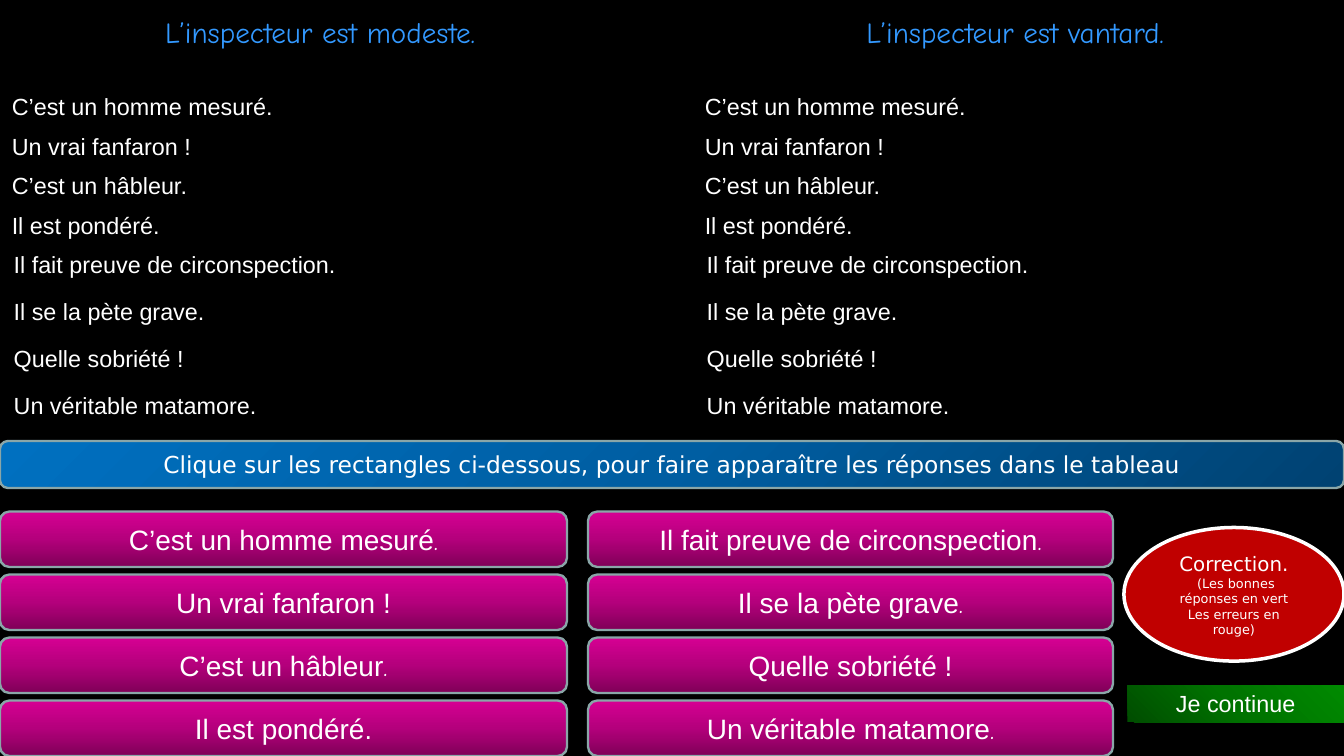
"""Build a French vocabulary exercise slide with two answer lists and clickable rectangles."""
from copy import deepcopy

from pptx import Presentation
from pptx.dml.color import RGBColor
from pptx.enum.shapes import MSO_SHAPE
from pptx.enum.text import MSO_ANCHOR, MSO_AUTO_SIZE, PP_ALIGN
from pptx.oxml.ns import qn
from pptx.util import Inches, Pt

ROUNDED, ELLIPSE, RECTANGLE = MSO_SHAPE.ROUNDED_RECTANGLE, MSO_SHAPE.OVAL, MSO_SHAPE.RECTANGLE
LEFT, CENTER = PP_ALIGN.LEFT, PP_ALIGN.CENTER
TOP, MIDDLE = MSO_ANCHOR.TOP, MSO_ANCHOR.MIDDLE
ARIAL, COMIC, DEJAVU = "Arial", "Comic Neue", "DejaVu Sans"
WHITE, BLACK, SKY, RED, BORDER = "FFFFFF", "000000", "3399FF", "C00000", "8AA6A8"
BLUES = ("004272", "005EA2", "0070C0")
PINKS = ("7F0057", "B4007C", "D60093")
GREENS = ("004D00", "007300", "008A00")

HEADINGS = [
    ("L’inspecteur est modeste.", (0, 0, 7.62, 0.75)),
    ("L’inspecteur est vantard.", (8.17, 0, 7.83, 0.75)),
]
ANSWERS = [
    ("C’est un homme mesuré", ".", COMIC),
    ("Un vrai fanfaron !", "", COMIC),
    ("C’est un hâbleur", ".", COMIC),
    ("Il est pondéré", ".", ARIAL),
    ("Il fait preuve de circonspection", ".", COMIC),
    ("Il se la pète grave", ".", COMIC),
    ("Quelle sobriété !", "", COMIC),
    ("Un véritable matamore", ".", COMIC),
]
INSTRUCTION = "Clique sur les rectangles ci-dessous, pour faire apparaître les réponses dans le tableau"
CORRECTION = [
    ("Correction.", 17),
    (" (Les bonnes réponses en vert", 11),
    ("Les erreurs en rouge)", 11),
]
ROWS = 4
LIST_LEFTS, LIST_WIDTH = (0, 8.25), 7.56
LIST_TOP, LIST_HEIGHT, LIST_GAP = 1.03, 1.89, 9.85
LINE_TOP, LINE_HEIGHT, LINE_PITCH = 2.91, 0.47, 0.56
BUTTON_COLUMNS = ((0, 6.75), (7, 6.25))
BUTTON_TOP, BUTTON_HEIGHT, BUTTON_PITCH = 6.09, 0.66, 0.75


def color(value):
    return RGBColor.from_string(value)


def place(box, area):
    box.left, box.top, box.width, box.height = (Inches(length) for length in area)


def write(box, paragraphs, align=CENTER, anchor=MIDDLE, insets=(0.14, 0.07)):
    """Fill a box with paragraphs, each a list of (text, size, font, colour) spans."""
    frame = box.text_frame
    frame.word_wrap = True
    frame.auto_size = MSO_AUTO_SIZE.NONE
    frame.vertical_anchor = anchor
    frame.margin_left = frame.margin_right = Inches(insets[0])
    frame.margin_top = frame.margin_bottom = Inches(insets[1])
    for index, spans in enumerate(paragraphs):
        para = frame.paragraphs[0] if index == 0 else frame.add_paragraph()
        para.alignment = align
        para.line_spacing = 1.0
        para.space_before = para.space_after = Pt(0)
        for text, size, font, tone in spans:
            span = para.add_run()
            span.text = text
            span.font.size = Pt(size)
            span.font.name = font
            span.font.color.rgb = color(tone)
    return frame


def paint_gradient(shape, tones, angle):
    shape.fill.gradient()
    shape.fill.gradient_angle = angle
    stops = shape._element.spPr.find(".//" + qn("a:gsLst"))
    stops.insert(1, deepcopy(stops[0]))
    for stop, tone, position in zip(shape.fill.gradient_stops, tones, (0, 0.5, 1)):
        stop.color.rgb = color(tone)
        stop.position = position


def add_panel(page, kind, area, border=None, width=2):
    shape = page.shapes.add_shape(kind, *(Inches(length) for length in area))
    shape.shadow.inherit = False
    shape.fill.background()
    if border:
        shape.line.color.rgb = color(border)
        shape.line.width = Pt(width)
    else:
        shape.line.fill.background()
    return shape


def add_headings(page):
    (_, left_area), (_, right_area) = HEADINGS
    title = page.shapes.title
    place(title, left_area)
    right_panel = add_panel(page, ROUNDED, right_area)
    title._element.spPr.append(deepcopy(right_panel._element.spPr.find(qn("a:prstGeom"))))
    for box, (text, _) in zip((title, right_panel), HEADINGS):
        write(box, [[(text, 25, COMIC, SKY)]])


def add_lists(page):
    lines = [[(text + dot, 20, ARIAL, WHITE)] for text, dot, _ in ANSWERS]
    for body, left in zip(list(page.placeholders)[1:], LIST_LEFTS):
        place(body, (left, LIST_TOP, LIST_WIDTH, LIST_HEIGHT))
        frame = write(body, lines[:ROWS], LEFT, TOP)
        for index, para in enumerate(frame.paragraphs):
            properties = para._p.get_or_add_pPr()
            properties.set("marL", "0")
            properties.set("indent", "0")
            para.space_before = Pt(LIST_GAP if index else 0)
            properties.append(properties.makeelement(qn("a:buNone"), {}))
        for row, line in enumerate(lines[ROWS:]):
            top = LINE_TOP + row * LINE_PITCH
            panel = add_panel(page, ROUNDED, (left, top, LIST_WIDTH, LINE_HEIGHT))
            write(panel, [line], LEFT)


def add_buttons(page):
    for index, (text, dot, dot_font) in enumerate(ANSWERS):
        column, row = divmod(index, ROWS)
        left, width = BUTTON_COLUMNS[column]
        top = BUTTON_TOP + row * BUTTON_PITCH
        button = add_panel(page, ROUNDED, (left, top, width, BUTTON_HEIGHT), BORDER)
        paint_gradient(button, PINKS, 90)
        spans = [(text, 24, ARIAL, WHITE)]
        if dot:
            spans.append((dot, 23, dot_font, WHITE))
        write(button, [spans])


def main():
    deck = Presentation()
    deck.slide_width, deck.slide_height = Inches(16), Inches(9)
    page = deck.slides.add_slide(deck.slide_layouts.get_by_name("Two Content"))
    page.background.fill.solid()
    page.background.fill.fore_color.rgb = color(BLACK)

    add_headings(page)
    add_lists(page)

    banner = add_panel(page, ROUNDED, (0, 5.25, 16, 0.56), BORDER)
    paint_gradient(banner, BLUES, 135)
    write(banner, [[(INSTRUCTION, 20, DEJAVU, WHITE)]])

    add_buttons(page)

    correction = add_panel(page, ELLIPSE, (13.38, 6.28, 2.62, 1.59), WHITE, 3)
    correction.fill.solid()
    correction.fill.fore_color.rgb = color(RED)
    write(correction, [[(text, size, DEJAVU, WHITE)] for text, size in CORRECTION])

    proceed = add_panel(page, RECTANGLE, (13.42, 8.16, 2.58, 0.44))
    paint_gradient(proceed, GREENS, 45)
    write(proceed, [[("Je continue", 20, ARIAL, WHITE)]], anchor=TOP, insets=(0.1, 0.05))

    deck.save("out.pptx")


if __name__ == "__main__":
    main()
